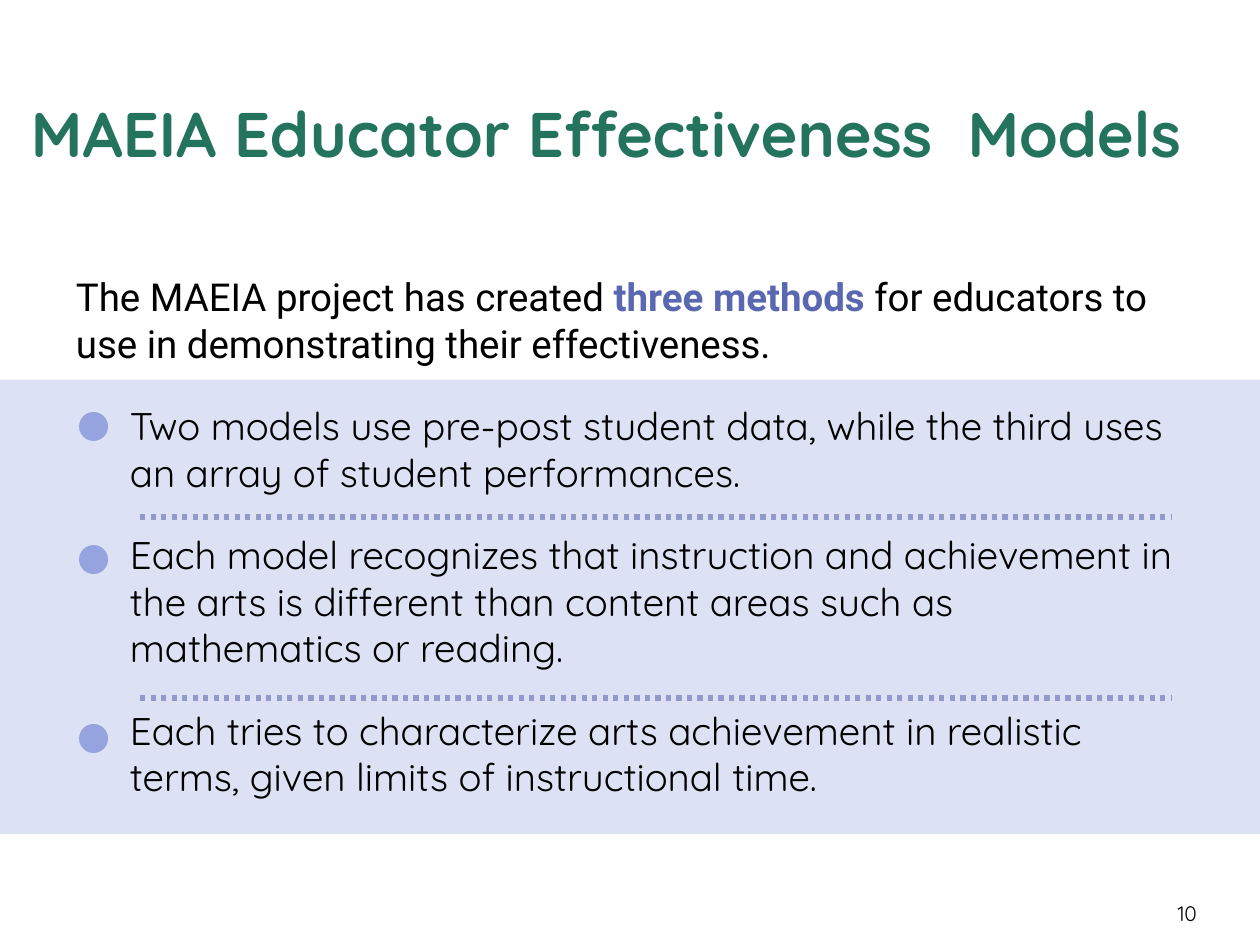
from dataclasses import dataclass

from pptx import Presentation
from pptx.dml.color import RGBColor
from pptx.enum.dml import MSO_LINE
from pptx.enum.shapes import MSO_CONNECTOR, MSO_SHAPE
from pptx.enum.text import MSO_ANCHOR, PP_ALIGN
from pptx.oxml.ns import qn
from pptx.util import Pt

RECTANGLE, OVAL = MSO_SHAPE.RECTANGLE, MSO_SHAPE.OVAL
STRAIGHT = MSO_CONNECTOR.STRAIGHT
DOTS = MSO_LINE.ROUND_DOT
TOP, BOTTOM = MSO_ANCHOR.TOP, MSO_ANCHOR.BOTTOM
LEFT, RIGHT = PP_ALIGN.LEFT, PP_ALIGN.RIGHT

EMU_PER_PX = 914400 / 126
PAGE_WIDTH, PAGE_HEIGHT = 1260, 945


@dataclass(frozen=True)
class Theme:
    heading_font: str = "Quicksand"
    intro_font: str = "Roboto"
    title_size: int = 36
    body_size: int = 22
    number_size: int = 12
    line_pitch: float = 26.5
    item_gap: float = 20.8
    rule_width: int = 3
    ink: str = "000000"
    title: str = "23735D"
    emphasis: str = "5968B0"
    band: str = "DCE1F4"
    rule: str = "919ACA"
    dot: str = "95A4DE"


THEME = Theme()

INTRO = [
    ("The MAEIA project has created ", {}),
    ("three methods ", {"color": THEME.emphasis, "bold": True}),
    ("for educators to use in demonstrating their effectiveness.", {}),
]
ITEMS = [
    "Two models use pre-post student data, while the third uses an array of "
    "student performances.",
    "Each model recognizes that instruction and achievement in the arts is "
    "different than content areas such as mathematics or reading.",
    "Each tries to characterize arts achievement in realistic terms, given "
    "limits of instructional time.",
]


def px(length):
    return round(length * EMU_PER_PX)


def rgb(value):
    return RGBColor.from_string(value)


def add_span(para, text, color=THEME.ink, **font_values):
    span = para.add_run()
    span.text = text
    span.font.color.rgb = rgb(color)
    for name, value in font_values.items():
        setattr(span.font, name, value)


def add_text_box(page, box, anchor=TOP, insets=(0, 0, 0, 0)):
    """Add an empty wrapping text box; insets run left, top, right, bottom."""
    frame = page.shapes.add_textbox(*map(px, box)).text_frame
    left, top, right, bottom = map(px, insets)
    values = {
        "word_wrap": True,
        "vertical_anchor": anchor,
        "margin_left": left,
        "margin_top": top,
        "margin_right": right,
        "margin_bottom": bottom,
    }
    for name, value in values.items():
        setattr(frame, name, value)
    return frame


def add_filled_shape(page, kind, box, color):
    shape = page.shapes.add_shape(kind, *map(px, box))
    shape.shadow.inherit = False
    shape.fill.solid()
    shape.fill.fore_color.rgb = rgb(color)
    shape.line.fill.background()


def add_dotted_rule(page, left, right, y):
    rule = page.shapes.add_connector(STRAIGHT, px(left), px(y), px(right), px(y))
    rule.line.color.rgb = rgb(THEME.rule)
    rule.line.width = Pt(THEME.rule_width)
    rule.line.dash_style = DOTS
    properties = rule._element.spPr
    properties.append(properties.makeelement(qn("a:effectLst"), {}))


def add_label(page, box, text, align=LEFT, **font_values):
    """Add one line of heading type standing on the bottom of its box."""
    para = add_text_box(page, box, BOTTOM).paragraphs[0]
    para.alignment = align
    add_span(para, text, name=THEME.heading_font, **font_values)


def add_body(page, box):
    frame = add_text_box(page, box, insets=(13, 6, 13, 6))
    size = Pt(THEME.body_size)
    intro = frame.paragraphs[0]
    intro.line_spacing = Pt(THEME.line_pitch)
    for text, values in INTRO:
        add_span(intro, text, name=THEME.intro_font, size=size, **values)
    for text in ITEMS:
        para = frame.add_paragraph()
        para._p.get_or_add_pPr().set("marL", str(px(54)))
        para.line_spacing = Pt(THEME.line_pitch)
        para.space_before = Pt(THEME.item_gap)
        add_span(para, text, name=THEME.heading_font, size=size)


def add_item_marks(page, box):
    """Add the dots beside the items and the rules between them."""
    left, top, width, _ = box
    for offset in (137, 318):
        add_dotted_rule(page, left + 140, left + width - 88, top + offset)
    for offset in (32, 165, 344):
        add_filled_shape(page, OVAL, (left + 79, top + offset, 29, 29), THEME.dot)


def main():
    deck = Presentation()
    deck.slide_width, deck.slide_height = px(PAGE_WIDTH), px(PAGE_HEIGHT)
    page = deck.slides.add_slide(deck.slide_layouts[6])
    band = (0, 380, PAGE_WIDTH, 454)
    add_filled_shape(page, RECTANGLE, band, THEME.band)
    add_label(page, (1092, 876, 105, 50), "10", RIGHT, size=Pt(THEME.number_size))
    add_body(page, (63, 267, 1134, 605))
    add_label(page, (31, 12, 1207, 158), "MAEIA Educator Effectiveness  Models",
              color=THEME.title, size=Pt(THEME.title_size), bold=True)
    add_item_marks(page, band)
    deck.save("out.pptx")


if __name__ == "__main__":
    main()
